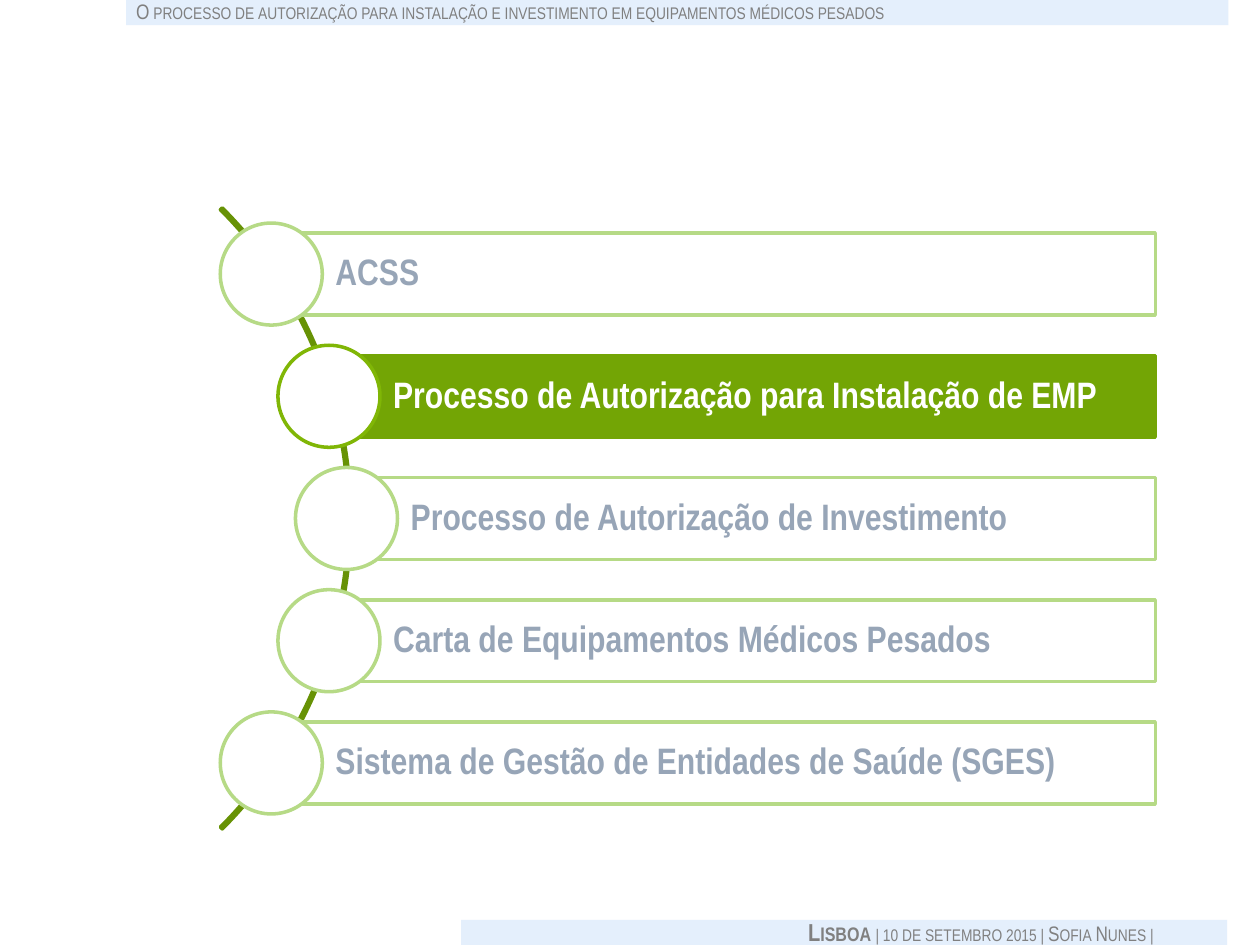
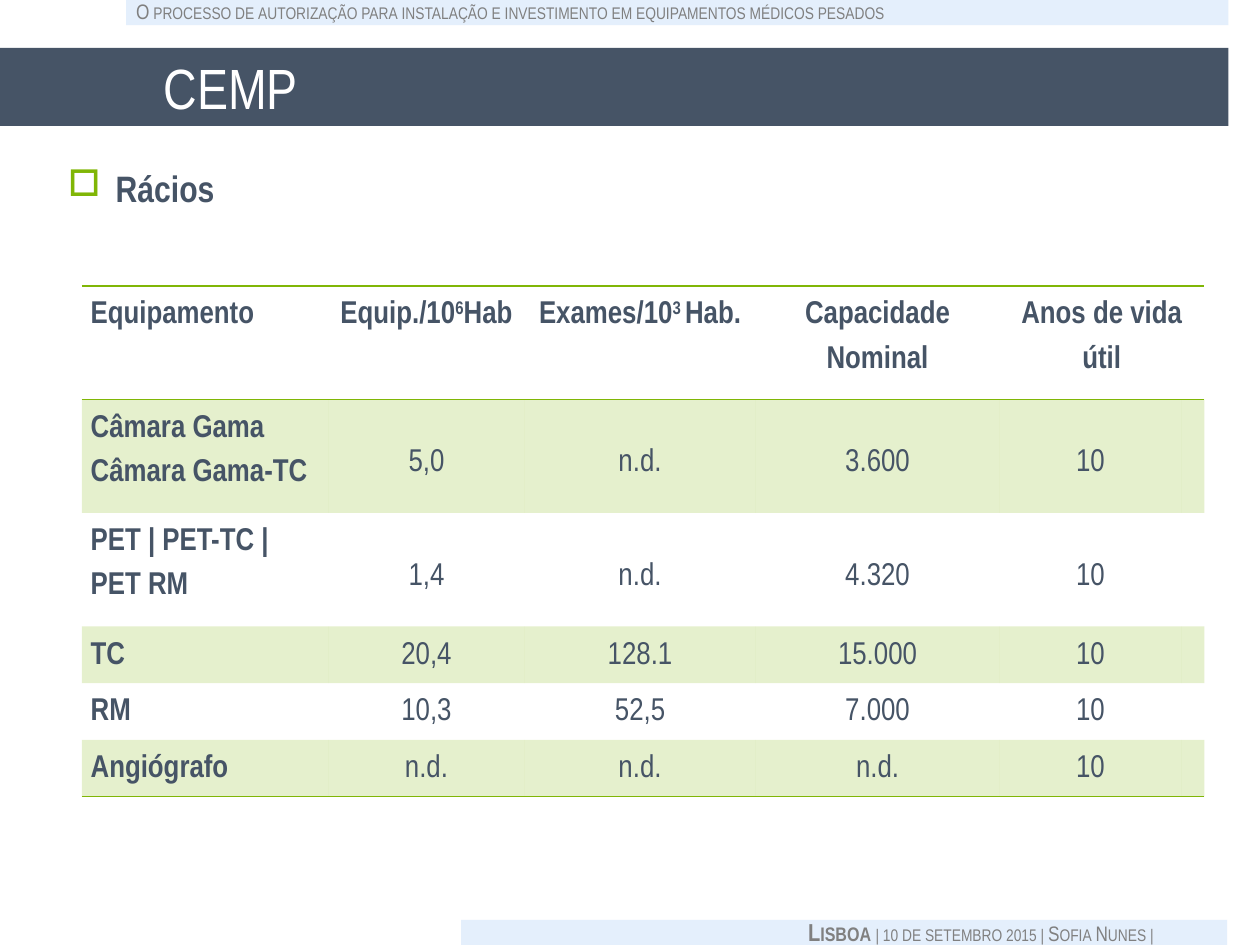
"""Build two slides on heavy medical equipment: an agenda arc and a table of ratios."""
from dataclasses import dataclass
from math import sqrt

from lxml import etree
from pptx import Presentation
from pptx.dml.color import RGBColor
from pptx.enum.shapes import MSO_SHAPE
from pptx.enum.text import MSO_ANCHOR, MSO_AUTO_SIZE, PP_ALIGN
from pptx.oxml.ns import qn
from pptx.util import Inches, Pt

RECT, OVAL, ARC = MSO_SHAPE.RECTANGLE, MSO_SHAPE.OVAL, MSO_SHAPE.BLOCK_ARC
TOP, MIDDLE = MSO_ANCHOR.TOP, MSO_ANCHOR.MIDDLE
LEFT, CENTER = PP_ALIGN.LEFT, PP_ALIGN.CENTER
FIXED = MSO_AUTO_SIZE.NONE
TITLE_ONLY, BLANK = 5, 6
PLAIN_TABLE = "{2D5ABB26-0587-4C30-8999-92F81FD0307C}"


@dataclass(frozen=True)
class Theme:
    """Colours, font and type sizes shared by the slides."""

    font: str = "Arial Narrow"
    white: str = "FFFFFF"
    band: str = "E4EFFC"
    grey: str = "808080"
    slate: str = "465466"
    faded_text: str = "97A5B7"
    green: str = "80B606"
    active_fill: str = "73A505"
    faded_green: str = "B6DA86"
    arc: str = "679205"
    title: float = 32.4
    heading: float = 21
    table: float = 18
    city: float = 14
    running: float = 12


THEME = Theme()
HEADER = "O processo de autorização para instalação e investimento em equipamentos médicos pesados"
CITY, EVENT = "Lisboa ", "| 10 de setembro 2015 | Sofia Nunes | "
AGENDA = [
    "ACSS",
    "Processo de Autorização para Instalação de EMP",
    "Processo de Autorização de Investimento",
    "Carta de Equipamentos Médicos Pesados",
    "Sistema de Gestão de Entidades de Saúde (SGES)",
]
ACTIVE_TOPIC = 1
RATIO_HEADS = [
    ["Equipamento"],
    ["Equip./10", "6", "Hab"],
    ["Exames/10", "3 ", "Hab."],
    ["Capacidade Nominal"],
    ["Anos de vida útil"],
]
RATIOS = [
    ["Câmara Gama Câmara Gama-TC", "5,0", "n.d.", "3.600", "10"],
    ["PET | PET-TC | PET RM", "1,4", "n.d.", "4.320", "10"],
    ["TC", "20,4", "128.1", "15.000", "10"],
    ["RM", "10,3", "52,5", "7.000", "10"],
    ["Angiógrafo", "n.d.", "n.d.", "n.d.", "10"],
]
RATIO_WIDTHS = [1.96, 1.55, 1.84, 1.93, 1.45, 0.17]
RATIO_HEIGHTS = [0.78, 0.78, 0.4, 0.4, 0.4, 0.4]


def apply(target, **values):
    """Set each named attribute on the target."""
    for name, value in values.items():
        setattr(target, name, value)


def inset(target, left, top, right, bottom):
    """Set the inner margins of a text frame or cell in inches."""
    apply(target, margin_left=Inches(left), margin_top=Inches(top),
          margin_right=Inches(right), margin_bottom=Inches(bottom))


def write(paragraph, text, size, color, bold=False, **run_properties):
    """Append a formatted run to a paragraph."""
    run = paragraph.add_run()
    run.text = text
    apply(run.font, name=THEME.font, size=Pt(size), bold=bold)
    run.font.color.rgb = RGBColor.from_string(color)
    for name, value in run_properties.items():
        run.font._element.set(name, value)


def add_box(slide, kind, box, fill, line=None):
    """Add a flat preset shape with an optional outline."""
    shape = slide.shapes.add_shape(kind, *map(Inches, box))
    shape.shadow.inherit = False
    shape.fill.solid()
    shape.fill.fore_color.rgb = RGBColor.from_string(fill)
    if line:
        shape.line.color.rgb = RGBColor.from_string(line)
        shape.line.width = Pt(2)
    else:
        shape.line.fill.background()
    return shape


def add_text(slide, box, align=LEFT, wrap=True):
    """Add a text box and return its first paragraph."""
    frame = slide.shapes.add_textbox(*map(Inches, box)).text_frame
    frame.word_wrap = wrap
    frame.paragraphs[0].alignment = align
    return frame.paragraphs[0]


def add_running_bands(slide):
    """Draw the header and footer bands with their captions."""
    for band in ((1, 0, 8.75, 0.2), (3.66, 7.3, 6.08, 0.2)):
        add_box(slide, RECT, band, THEME.band)
    footer = add_text(slide, (5.4, 7.23, 4.8, 0.34), CENTER)
    write(footer, CITY, THEME.city, THEME.grey, True, cap="small")
    write(footer, EVENT, THEME.running, THEME.grey, cap="small")
    header = add_text(slide, (0.92, -0.06, 6.26, 0.3), CENTER, wrap=False)
    write(header, HEADER, THEME.running, THEME.grey, cap="small")


def add_agenda(slide, box):
    """Place the topics at equal steps along an arc on the left of the box."""
    left, top, width, height = box
    diameter, step, bar_height, dot = 6.97, 0.97, 0.65, 0.81
    orbit = 3.45
    arc_x, middle = left - 2.45, top + height / 2
    arc = add_box(slide, ARC, (arc_x - diameter / 2, middle - diameter / 2, diameter, diameter),
                  THEME.arc, THEME.arc)
    arc.fill.background()
    for index, value in enumerate((189, 27, 0.003)):
        arc.adjustments[index] = value
    for index, topic in enumerate(AGENDA):
        active = index == ACTIVE_TOPIC
        offset = (index - (len(AGENDA) - 1) / 2) * step
        x, y = arc_x + sqrt(orbit ** 2 - offset ** 2), middle + offset
        bar = add_box(slide, RECT, (x, y - bar_height / 2, left + width - x, bar_height),
                      THEME.active_fill if active else THEME.white,
                      THEME.active_fill if active else THEME.faded_green)
        apply(bar.text_frame, word_wrap=True, vertical_anchor=MIDDLE)
        inset(bar.text_frame, 0.51, 0.06, 0.06, 0.06)
        label = bar.text_frame.paragraphs[0]
        apply(label, alignment=LEFT, line_spacing=0.9)
        write(label, topic, THEME.heading, THEME.white if active else THEME.faded_text, True)
        add_box(slide, OVAL, (x - dot / 2, y - dot / 2, dot, dot), THEME.white,
                THEME.green if active else THEME.faded_green)


def set_title(slide, text, box):
    """Move and format the title placeholder as a dark band."""
    title = slide.shapes.title
    left, top, width, height = map(Inches, box)
    apply(title, left=left, top=top, width=width, height=height)
    title.fill.solid()
    title.fill.fore_color.rgb = RGBColor.from_string(THEME.slate)
    apply(title.text_frame, vertical_anchor=MIDDLE, word_wrap=True, auto_size=FIXED)
    inset(title.text_frame, 1.3, 0.05, 0.3, 0.05)
    title.text_frame.paragraphs[0].alignment = LEFT
    write(title.text_frame.paragraphs[0], text, THEME.title, THEME.white, cap="small")


def add_bullet_heading(slide, text, box):
    """Add a heading with a hollow square bullet."""
    heading = add_text(slide, box)
    properties = heading._p.get_or_add_pPr()
    properties.set("marL", str(Inches(0.38)))
    properties.set("indent", str(-Inches(0.38)))
    color = etree.SubElement(properties, qn("a:buClr"))
    etree.SubElement(color, qn("a:srgbClr"), val=THEME.green)
    etree.SubElement(properties, qn("a:buChar"), char="□")
    write(heading, text, THEME.heading, THEME.slate, True)


def style_cell(cell, edges, tinted):
    """Give a cell its margins, rules and translucent fill."""
    inset(cell, 0.07, 0, 0.07, 0)
    properties = cell._tc.get_or_add_tcPr()
    for edge in edges:
        rule = etree.SubElement(properties, qn(f"a:{edge}"), w=str(Pt(1)))
        fill = etree.SubElement(rule, qn("a:solidFill"))
        etree.SubElement(fill, qn("a:srgbClr"), val=THEME.green)
    if tinted:
        cell.fill.solid()
        cell.fill.fore_color.rgb = RGBColor.from_string(THEME.green)
        tint = properties.find(qn("a:solidFill"))[0]
        etree.SubElement(tint, qn("a:alpha"), val="20000")
    else:
        cell.fill.background()


def add_ratio_table(slide, left, top):
    """Add the table of ratios with ruled header and tinted alternate rows."""
    rows = [RATIO_HEADS] + [[[value] for value in row] for row in RATIOS]
    table = slide.shapes.add_table(
        len(rows), len(RATIO_WIDTHS), Inches(left), Inches(top),
        Inches(sum(RATIO_WIDTHS)), Inches(sum(RATIO_HEIGHTS))).table
    apply(table, first_row=False, horz_banding=False)
    table._tbl.tblPr.find(qn("a:tableStyleId")).text = PLAIN_TABLE
    for column, width in zip(table.columns, RATIO_WIDTHS):
        column.width = Inches(width)
    for row, height in zip(table.rows, RATIO_HEIGHTS):
        row.height = Inches(height)
    table.cell(0, 4).merge(table.cell(0, 5))
    edges = {0: ("lnT", "lnB"), len(rows) - 1: ("lnB",)}
    for r, row in enumerate(rows):
        for c in range(len(RATIO_WIDTHS)):
            style_cell(table.cell(r, c), edges.get(r, ()), r % 2 == 1)
        for c, parts in enumerate(row):
            cell = table.cell(r, c)
            cell.vertical_anchor = MIDDLE if r in (1, 2) and c else TOP
            paragraph = cell.text_frame.paragraphs[0]
            apply(paragraph, alignment=CENTER if c else LEFT, line_spacing=1.5)
            for index, part in enumerate(parts):
                raised = {"baseline": "30000"} if index == 1 else {}
                write(paragraph, part, THEME.table, THEME.slate, r == 0 or c == 0, **raised)


def build_agenda_slide(deck):
    """Build the slide with the agenda."""
    slide = deck.slides.add_slide(deck.slide_layouts[BLANK])
    add_running_bands(slide)
    add_agenda(slide, (1.75, 1.63, 7.42, 4.97))


def build_ratio_slide(deck):
    """Build the slide with the table of ratios."""
    slide = deck.slides.add_slide(deck.slide_layouts[TITLE_ONLY])
    add_running_bands(slide)
    set_title(slide, "CEMP", (0, 0.38, 9.75, 0.62))
    add_bullet_heading(slide, "Rácios", (0.44, 1.27, 6.18, 0.5))
    add_ratio_table(slide, 0.65, 2.27)


def main():
    """Build and save the presentation."""
    deck = Presentation()
    apply(deck, slide_width=Inches(10), slide_height=Inches(7.5))
    build_agenda_slide(deck)
    build_ratio_slide(deck)
    deck.save("out.pptx")


if __name__ == "__main__":
    main()
